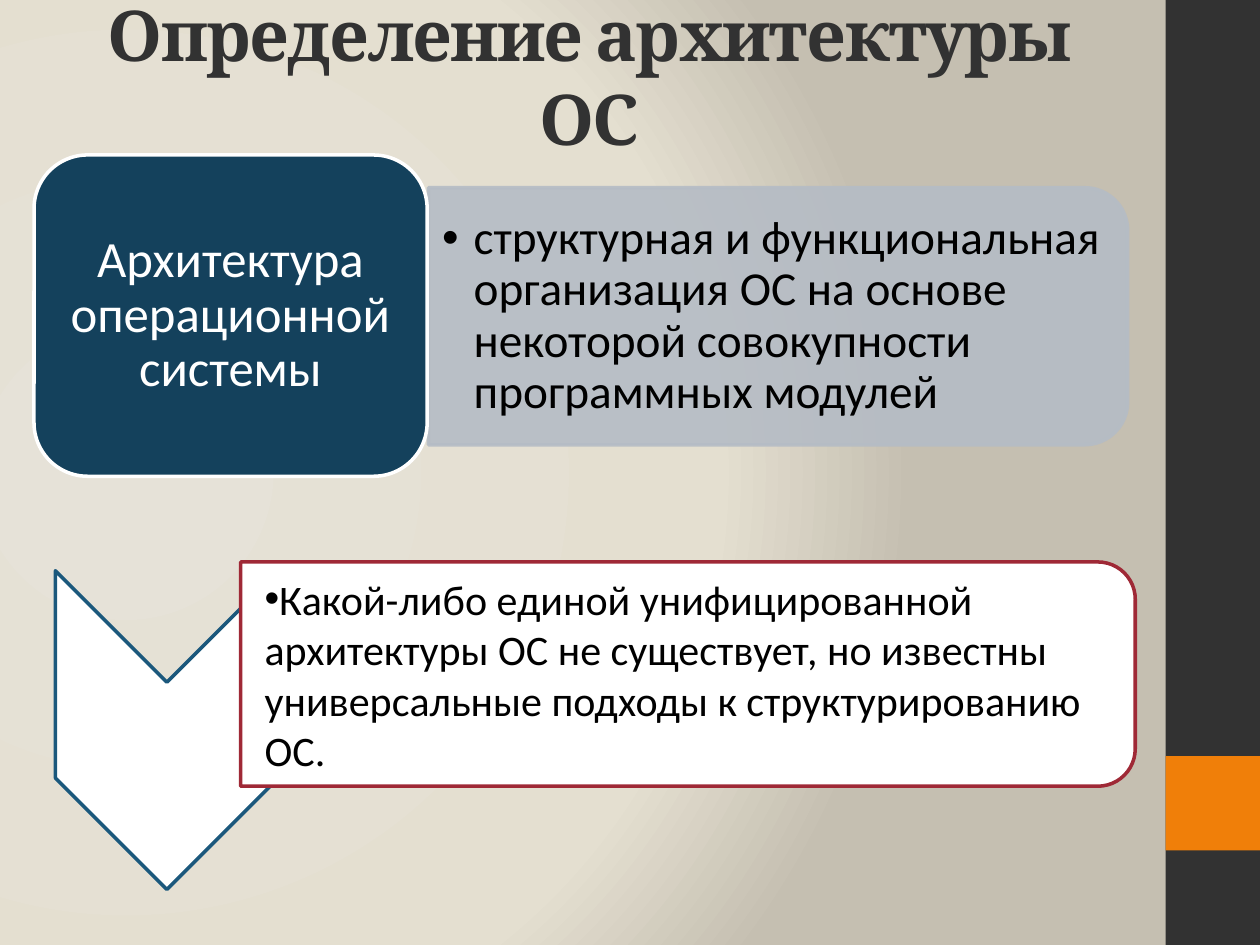
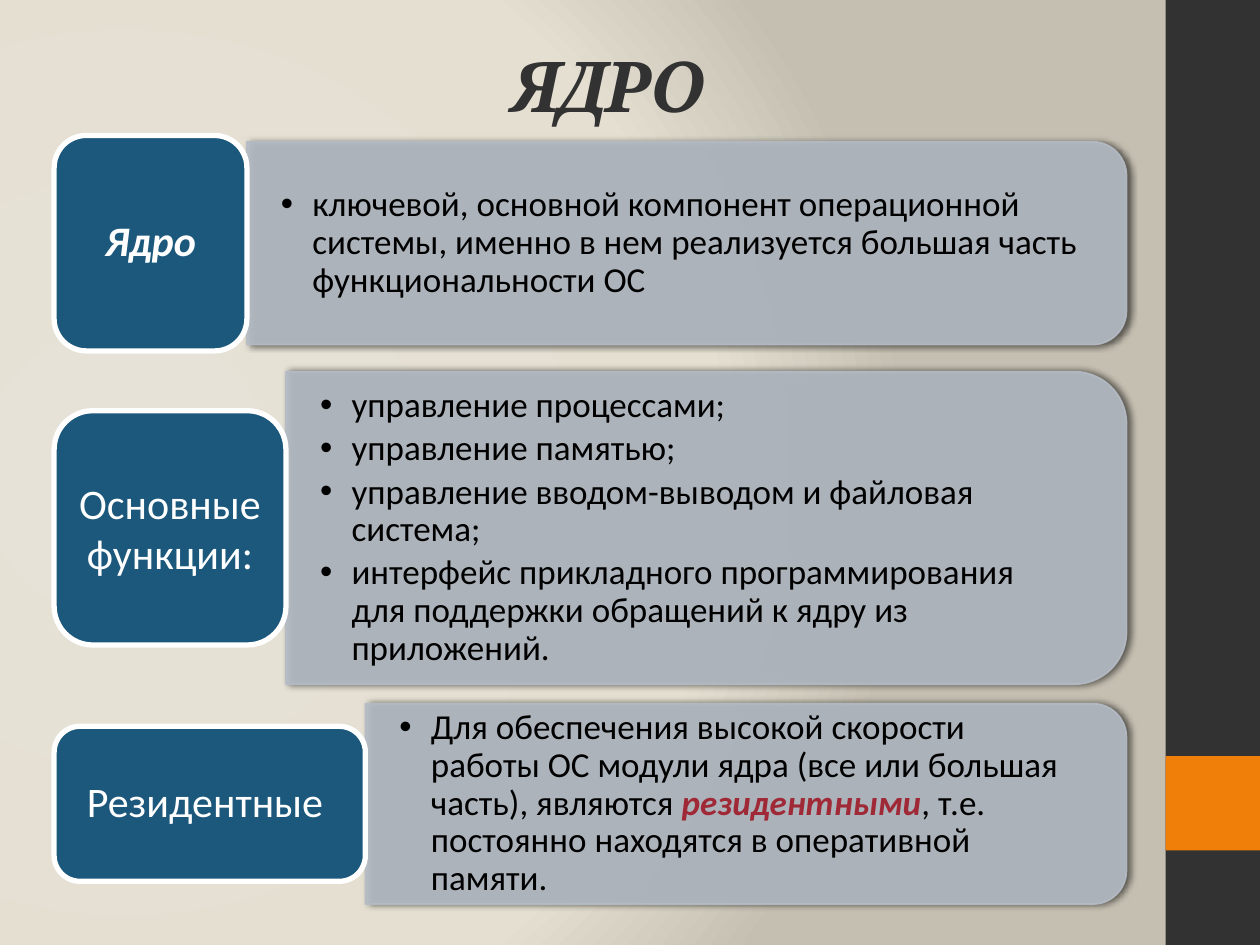
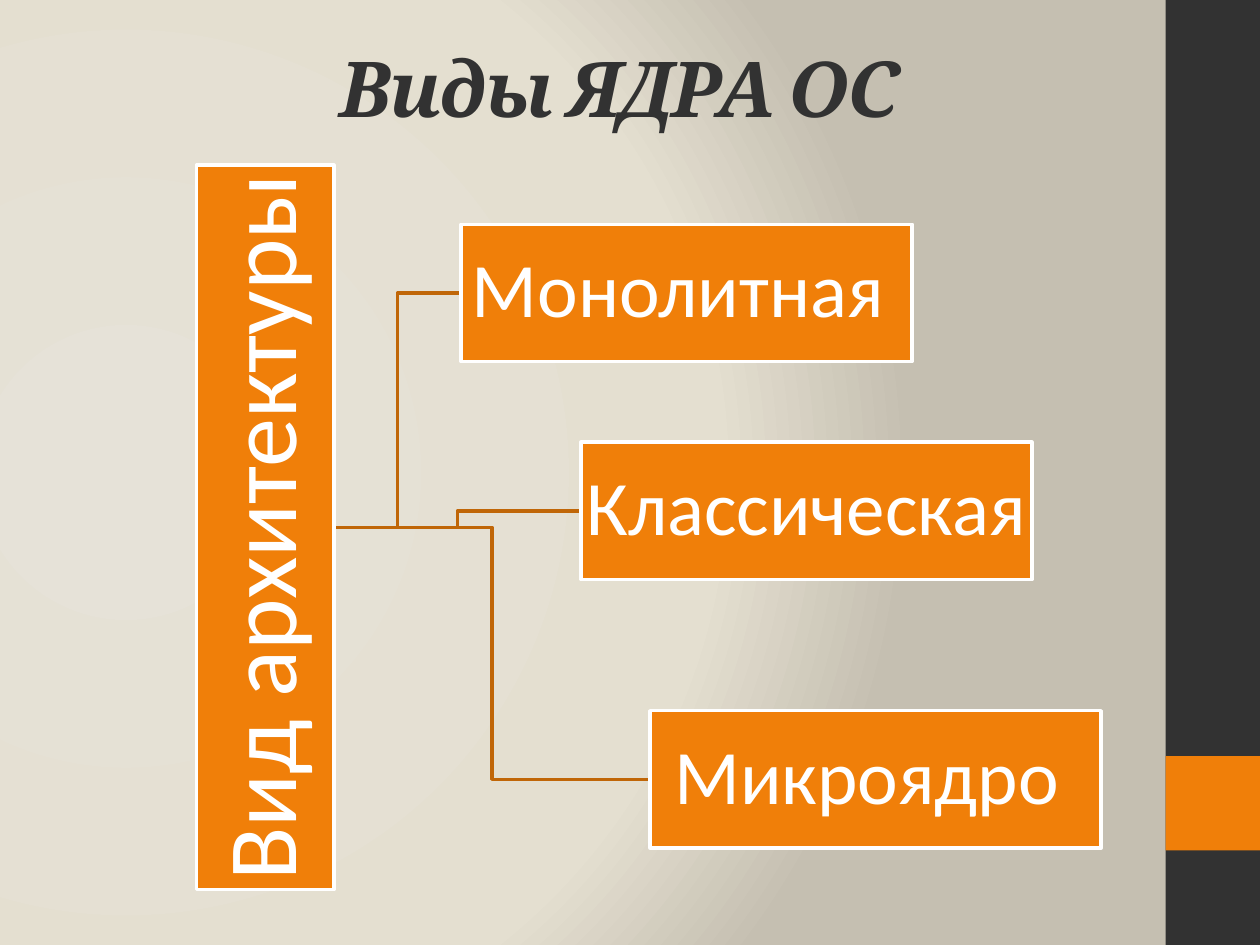
from lxml import etree
from pptx import Presentation
from pptx.dml.color import RGBColor
from pptx.enum.shapes import MSO_SHAPE
from pptx.enum.text import MSO_ANCHOR, PP_ALIGN
from pptx.oxml import parse_xml
from pptx.oxml.ns import nsdecls, qn
from pptx.util import Inches, Pt

RECT = MSO_SHAPE.RECTANGLE
ROUND_RECT = MSO_SHAPE.ROUNDED_RECTANGLE
ROUND_TOP = MSO_SHAPE.ROUND_2_SAME_RECTANGLE
CHEVRON = MSO_SHAPE.CHEVRON
MIDDLE = MSO_ANCHOR.MIDDLE
LEFT, CENTER = PP_ALIGN.LEFT, PP_ALIGN.CENTER

HEAD_FONT, BODY_FONT, BULLET_FONT = "Cambria", "Calibri", "Arial"
DARK, ORANGE, BROWN = "323232", "F07F09", "C06607"
BLUE, NAVY, GREY, RED = "1B587C", "14415C", "B5BCC5", "9F2936"
WHITE, BLACK = "FFFFFF", "000000"
BACKDROP = ((0, "E6E2D8"), (75, "E4DFD0"), (100, "C5BFB1"))
CORNER_INSET = 0.0488  # text inset of a rounded corner, as a share of height


def rgb(value):
    return RGBColor.from_string(value)


def inches(*values):
    return [Inches(v) for v in values]


def turned(x, y, w, h):
    """Frame that covers x, y, w, h once it is rotated by a quarter turn."""
    return x + (w - h) / 2, y + (h - w) / 2, h, w


def write(tf, paragraphs, size=20, color=BLACK, font=BODY_FONT, bold=False,
          italic=False, align=CENTER, spacing=0.9, after=0, bullet_indent=None,
          tracking=None, insets=(0.1, 0.05, 0.1, 0.05)):
    """Fill tf; a paragraph is a string or a list of (text, run format) pairs."""
    tf.word_wrap = True
    tf.vertical_anchor = MIDDLE
    (tf.margin_left, tf.margin_top,
     tf.margin_right, tf.margin_bottom) = inches(*insets)
    for i, runs in enumerate(paragraphs):
        p = tf.add_paragraph() if i else tf.paragraphs[0]
        p.alignment, p.line_spacing = align, spacing
        if after:
            p.space_after = Pt(after)
        if bullet_indent is not None:
            pPr = p._p.get_or_add_pPr()
            pPr.set("marL", str(Inches(bullet_indent)))
            pPr.set("indent", str(-Inches(bullet_indent)))
            etree.SubElement(pPr, qn("a:buFont")).set("typeface", BULLET_FONT)
            etree.SubElement(pPr, qn("a:buChar")).set("char", "•")
        for text, own in [(runs, {})] if isinstance(runs, str) else runs:
            r = p.add_run()
            r.text = text
            r.font.name, r.font.size = font, Pt(size)
            r.font.bold = own.get("bold", bold)
            r.font.italic = own.get("italic", italic)
            r.font.color.rgb = rgb(own.get("color", color))
            if tracking is not None:
                r._r.get_or_add_rPr().set("spc", str(tracking))


class Deck:
    def __init__(self):
        self.prs = Presentation()
        self.prs.slide_width, self.prs.slide_height = inches(10, 7.5)
        self.set_backdrop()

    def set_backdrop(self):
        master = self.prs.slide_master
        master.background.fill.gradient()
        old = master._element.find(".//" + qn("p:bgPr"))[0]
        stops = "".join(f'<a:gs pos="{pos * 1000}"><a:srgbClr val="{color}"/></a:gs>'
                        for pos, color in BACKDROP)
        old.getparent().replace(old, parse_xml(
            f'<a:gradFill {nsdecls("a")} rotWithShape="1"><a:gsLst>{stops}</a:gsLst>'
            '<a:path path="circle"><a:fillToRect l="20000" t="50000" r="100000" '
            'b="50000"/></a:path></a:gradFill>'))

    def slide(self, title, frame, size=40, italic=True):
        self.s = self.prs.slides.add_slide(self.prs.slide_layouts[6])
        self.shape(RECT, (9.25, 0, 0.75, 7.5), DARK)
        self.shape(RECT, (9.25, 6, 0.75, 0.75), ORANGE)
        self.text(frame, [title], size=size, color=DARK, font=HEAD_FONT,
                  bold=True, italic=italic, spacing=1, tracking=-100)

    def text(self, frame, paragraphs, **style):
        write(self.s.shapes.add_textbox(*inches(*frame)).text_frame,
              paragraphs, **style)

    def shape(self, kind, frame, fill, line=None, width=2, rotation=0):
        if rotation:
            frame = turned(*frame)
        sp = self.s.shapes.add_shape(kind, *inches(*frame))
        sp.rotation = rotation
        sp.shadow.inherit = False
        sp.fill.solid()
        sp.fill.fore_color.rgb = rgb(fill)
        if line:
            sp.line.color.rgb = rgb(line)
            sp.line.width = Pt(width)
        else:
            sp.line.fill.background()
        return sp

    def label(self, kind, frame, label, fill, width=2, rotation=0, **style):
        sp = self.shape(kind, frame, fill, WHITE, width, rotation)
        write(sp.text_frame, [label], color=WHITE, **style)

    def card(self, frame, paragraphs, fill=GREY, line=GREY, width=2, alpha=None,
             shadow=False, **style):
        """Panel rounded on its right side, with upright text."""
        sp = self.shape(ROUND_TOP, frame, fill, line, width, rotation=90)
        spPr = sp._element.spPr
        if alpha:
            for color in spPr.iter(qn("a:srgbClr")):
                etree.SubElement(color, qn("a:alpha")).set("val", str(alpha * 1000))
        if shadow:
            spPr.find(qn("a:effectLst")).append(parse_xml(
                f'<a:outerShdw {nsdecls("a")} blurRad="{Pt(4)}" dist="{Pt(2)}" dir="0" '
                f'rotWithShape="0"><a:srgbClr val="{BLACK}"><a:alpha val="60000"/>'
                '</a:srgbClr></a:outerShdw>'))
        x, y, w, h = frame
        inset = h * CORNER_INSET
        self.text((x, y + inset, w - inset, h - 2 * inset), paragraphs,
                  align=LEFT, **style)

    def elbow(self, x1, y1, x2, y2):
        mid = (x1 + x2) / 2
        builder = self.s.shapes.build_freeform(*inches(x1, y1))
        builder.add_line_segments(
            [inches(*pt) for pt in ((mid, y1), (mid, y2), (x2, y2))], close=False)
        sp = builder.convert_to_shape()
        sp.shadow.inherit = False
        sp.fill.background()
        sp.line.color.rgb = rgb(BROWN)
        sp.line.width = Pt(2)


def definition_slide(deck):
    deck.slide("Определение архитектуры ОС", (0.51, 0.13, 8.33, 0.94), italic=False)
    deck.card((3.4, 1.49, 5.55, 2.04),
              ["структурная и функциональная организация ОС на основе "
               "некоторой совокупности программных модулей"],
              alpha=90, size=27, after=4, bullet_indent=0.25,
              insets=(0.11, 0.06, 0.11, 0.06))
    deck.label(ROUND_RECT, (0.27, 1.23, 3.12, 2.55),
               "Архитектура операционной системы", NAVY, size=29,
               insets=(0.12, 0.06, 0.12, 0.06))
    deck.shape(CHEVRON, (0.44, 4.53, 1.77, 2.53), WHITE, BLUE, rotation=90)
    deck.card((1.91, 4.46, 7.1, 1.78),
              ["Какой-либо единой унифицированной архитектуры ОС не существует, "
               "но известны универсальные подходы к структурированию ОС."],
              fill=WHITE, line=RED, size=24, spacing=1, bullet_indent=0,
              insets=(0.19, 0.02, 0.02, 0.02))


def kernel_slide(deck):
    deck.slide("ЯДРО", (0, 0.21, 9.66, 0.92))
    left, right = 0.43, 8.94
    resident = [
        ("Для обеспечения высокой скорости работы ОС модули ядра "
         "(все или большая часть), являются ", {}),
        ("резидентными", {"color": RED, "bold": True, "italic": True}),
        (", т.е. постоянно находятся в оперативной памяти.", {})]
    functions = [
        "управление процессами;",
        "управление памятью;",
        "управление вводом-выводом и файловая система;",
        "интерфейс прикладного программирования для поддержки обращений "
        "к ядру из приложений."]
    kernel = ["ключевой, основной компонент операционной системы, именно в нем "
              "реализуется большая часть функциональности ОС"]
    # label, its width and height, its format, card height, row middle, card text
    rows = (
        ("Ядро", 1.53, 1.71, {"bold": True, "italic": True}, 1.61, 1.93, kernel),
        ("Основные функции:", 1.84, 1.86, {"spacing": 1}, 2.48, 4.19, functions),
        ("Резидентные ", 2.47, 1.23, {}, 1.59, 6.38, [resident]))
    for label, w, h, style, card_h, middle, paragraphs in rows:
        x = left + w
        deck.card((x, middle - card_h / 2, right - x, card_h), paragraphs, width=1,
                  alpha=90, shadow=True, after=3, bullet_indent=0.25,
                  insets=(0.27, 0.14, 0.3, 0.14))
        deck.label(ROUND_RECT, (left, middle - h / 2, w, h), label, BLUE,
                   width=3, size=24, **style)


def kinds_slide(deck):
    deck.slide("Виды ЯДРА ОС", (0.75, 0.06, 8.33, 1.25), size=44)
    x, y, w, h = root = (1.56, 1.31, 1.09, 5.75)
    kinds = (("Монолитная ", 3.66, 1.78), ("Классическая ", 4.61, 3.51),
             ("Микроядро ", 5.16, 5.64))
    kind_w, kind_h = 3.58, 1.09
    for _, left, top in reversed(kinds):
        deck.elbow(x + w, y + h / 2, left, top + kind_h / 2)
    deck.label(RECT, root, "Вид архитектуры", ORANGE, rotation=270, size=56,
               insets=[0.04] * 4)
    for label, left, top in kinds:
        deck.label(RECT, (left, top, kind_w, kind_h), label, ORANGE, size=44,
                   insets=[0.03] * 4)


def main():
    deck = Deck()
    definition_slide(deck)
    kernel_slide(deck)
    kinds_slide(deck)
    deck.prs.save("out.pptx")


if __name__ == "__main__":
    main()
